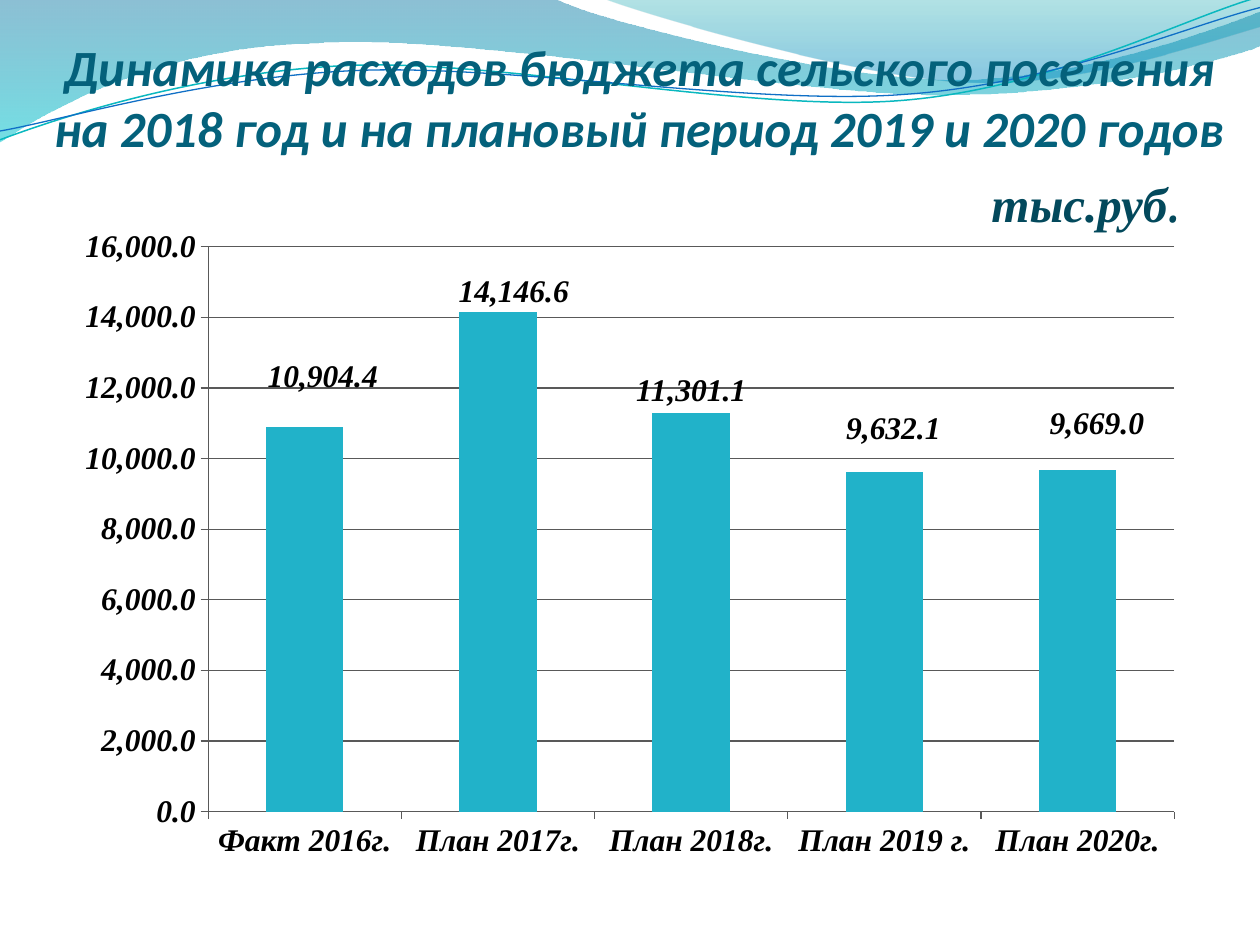
import lxml.etree
import pptx
import pptx.chart.data
import pptx.dml.color
import pptx.enum.chart
import pptx.enum.text
import pptx.oxml.ns
import pptx.util
from pptx.util import Inches

COLORS = {
    "title": "04617B", "unit": "03495C", "text": "000000", "bar": "21B2C9",
    "axis": "595959", "teal": "0AB8BF", "blue": "0F6FC6",
}
SERIF = "Times New Roman"
TITLE = ("Динамика расходов бюджета сельского поселения "
         "на 2018 год и на плановый период 2019 и 2020 годов")
UNIT_RUNS = [("тыс.руб", SERIF), (".", "TeX Gyre Pagella")]
NUMBER_FORMAT = "#,##0.0"
EXPENSES = [
    ("Факт 2016г.", 10904.4),
    ("План 2017г.", 14146.6),
    ("План 2018г.", 11301.1),
    ("План 2019 г.", 9632.1),
    ("План 2020г.", 9669.0),
]
# Point index: label shift as a share of the chart's width and height
LABEL_SHIFTS = {0: (0.016, -0.043), 1: (0.014, 0.003),
                3: (0.008, -0.032), 4: (0.017, -0.037)}
PLOT_AREA = {"x": 0.128, "y": 0.046, "w": 0.852, "h": 0.862}

# Each outline is a start point, then segments: one point is a line, three a Bezier curve.
# Gradient stops are position, colour and opacity in percent.
WAVES = [
    {"start": (0, 0), "segments": [
        [(4.4, -0.01)],
        [(4.76, 0.17), (6.64, 0.63), (7.58, 0.63)],
        [(8.53, 0.63), (9.58, 0.26), (10, 0.09)],
        [(10.01, 0.36)],
        [(9.83, 0.44), (8.7, 0.76), (7.46, 0.75)],
        [(6.22, 0.75), (3.82, 0.28), (2.57, 0.34)],
        [(1.29, 0.36), (0.46, 0.83), (-0.01, 1.13)]],
     "stops": [(0, "0074A1", 45), (1, "00C6CF", 55)]},
    {"start": (4.79, -0.01), "segments": [
        [(5.09, 0.11), (6.82, 0.62), (7.69, 0.65)],
        [(8.56, 0.69), (9.61, 0.32), (10, 0.21)],
        [(10, 0)]],
     "stops": [(0, "00A1A9", 30), (0.8, "008BBF", 45)]},
    {"start": (0, 1.11), "segments": [
        [(0.48, 0.93), (1.58, 0.57), (2.77, 0.52)],
        [(3.95, 0.47), (5.93, 0.89), (7.13, 0.8)],
        [(8.33, 0.71), (9.38, 0.15), (9.98, -0.02)]],
     "line": ("teal", 0.85)},
    {"start": (0, 1.04), "segments": [
        [(0.47, 0.96), (1.64, 0.61), (2.83, 0.56)],
        [(4.03, 0.51), (5.97, 0.84), (7.17, 0.75)],
        [(8.36, 0.67), (9.41, 0.21), (10, 0.06)]],
     "line": ("blue", 0.75)},
]


def rgb(value):
    return pptx.dml.color.RGBColor.from_string(value)


def style_font(font, size, color, name=SERIF):
    font.size = pptx.util.Pt(size)
    font.name = name
    font.bold = font.italic = True
    font.color.rgb = rgb(COLORS[color])


def bend_segments(shape, segments):
    """Turn each run of three straight pieces into one cubic curve."""
    pieces = iter(shape.element.xpath(".//a:path/a:lnTo"))
    for segment in segments:
        group = [next(pieces) for _ in segment]
        if len(group) == 3:
            curve = lxml.etree.Element(pptx.oxml.ns.qn("a:cubicBezTo"))
            group[0].addprevious(curve)
            for piece in group:
                curve.append(piece[0])
                piece.getparent().remove(piece)


def add_wave(slide, wave):
    start, segments = wave["start"], wave["segments"]
    builder = slide.shapes.build_freeform(*map(Inches, start), scale=1.0)
    builder.add_line_segments([(Inches(x), Inches(y)) for segment in segments
                               for x, y in segment], close="stops" in wave)
    shape = builder.convert_to_shape()
    bend_segments(shape, segments)
    shape.shadow.inherit = False
    if "line" in wave:
        color, width = wave["line"]
        shape.fill.background()
        shape.line.color.rgb = rgb(COLORS[color])
        shape.line.width = pptx.util.Pt(width)
        return
    shape.line.fill.background()
    shape.fill.gradient()
    shape.fill.gradient_angle = 270
    for stop, (position, color, _) in zip(shape.fill.gradient_stops, wave["stops"]):
        stop.position = position
        stop.color.rgb = rgb(color)
    color_elements = shape.element.xpath(".//a:gs/a:srgbClr")
    for element, (_, _, opacity) in zip(color_elements, wave["stops"]):
        alpha = lxml.etree.SubElement(element, pptx.oxml.ns.qn("a:alpha"))
        alpha.set("val", str(opacity * 1000))


def add_text(slide, box, runs, size, color, alignment):
    shape = slide.shapes.add_textbox(*map(Inches, box))
    text_frame = shape.text_frame
    text_frame.word_wrap = True
    paragraph = text_frame.paragraphs[0]
    paragraph.alignment = alignment
    for text, font_name in runs:
        run = paragraph.add_run()
        run.text = text
        style_font(run.font, size, color, font_name)
    return text_frame


def manual_layout(**settings):
    layout = lxml.etree.Element(pptx.oxml.ns.qn("c:layout"))
    manual = lxml.etree.SubElement(layout, pptx.oxml.ns.qn("c:manualLayout"))
    for name, value in settings.items():
        lxml.etree.SubElement(manual, pptx.oxml.ns.qn("c:" + name)).set("val", str(value))
    return layout


def add_expense_chart(slide):
    data = pptx.chart.data.CategoryChartData(number_format=NUMBER_FORMAT)
    data.categories = [name for name, _ in EXPENSES]
    data.add_series("Series 1", [value for _, value in EXPENSES])
    chart = slide.shapes.add_chart(
        pptx.enum.chart.XL_CHART_TYPE.COLUMN_CLUSTERED,
        *map(Inches, (0.5, 1.72, 9, 5.2)), data).chart
    chart.has_legend = chart.has_title = False
    style_font(chart.font, 18, "text")

    for axis in (chart.category_axis, chart.value_axis):
        axis.major_tick_mark = pptx.enum.chart.XL_TICK_MARK.OUTSIDE
        style_font(axis.tick_labels.font, 18, "text")
        axis.format.line.color.rgb = rgb(COLORS["axis"])
    value_axis = chart.value_axis
    value_axis.minimum_scale, value_axis.maximum_scale = 0, 16000
    value_axis.major_unit = 2000
    value_axis.has_major_gridlines = True
    value_axis.major_gridlines.format.line.color.rgb = rgb(COLORS["axis"])
    value_axis.tick_labels.number_format = NUMBER_FORMAT
    value_axis.tick_labels.number_format_is_linked = False

    plot = chart.plots[0]
    plot.gap_width = 150
    plot.vary_by_categories = False
    series = plot.series[0]
    series.format.fill.solid()
    series.format.fill.fore_color.rgb = rgb(COLORS["bar"])
    labels = series.data_labels
    labels.show_value = True
    labels.number_format = NUMBER_FORMAT
    labels.number_format_is_linked = False
    labels.position = pptx.enum.chart.XL_LABEL_POSITION.OUTSIDE_END
    style_font(labels.font, 18, "text")
    for index in LABEL_SHIFTS:
        label = series.points[index].data_label
        style_font(label.font, 18, "text")
        label.position = pptx.enum.chart.XL_LABEL_POSITION.OUTSIDE_END

    chart_space = chart._chartSpace
    for element in chart_space.xpath(".//c:showLeaderLines"):
        element.set("val", "0")
    for element, (x, y) in zip(chart_space.xpath(".//c:dLbl/c:idx"), LABEL_SHIFTS.values()):
        element.addnext(manual_layout(x=x, y=y))
    plot_area = chart_space.xpath(".//c:plotArea")[0]
    for element in plot_area.xpath("./c:layout"):
        plot_area.remove(element)
    plot_area.insert(0, manual_layout(layoutTarget="inner", xMode="edge", yMode="edge",
                                      **PLOT_AREA))


def main():
    presentation = pptx.Presentation()
    presentation.slide_width, presentation.slide_height = Inches(10), Inches(7.5)
    slide = presentation.slides.add_slide(presentation.slide_layouts[6])
    for wave in WAVES:
        add_wave(slide, wave)
    align = pptx.enum.text.PP_ALIGN
    title = add_text(slide, (0.39, 0, 9.38, 1.25), [(TITLE, "Calibri")], 29, "title",
                     align.CENTER)
    title.vertical_anchor = pptx.enum.text.MSO_ANCHOR.BOTTOM
    title.margin_left = title.margin_right = title.margin_bottom = 0
    add_expense_chart(slide)
    add_text(slide, (7.27, 1.33, 2.19, 0.57), UNIT_RUNS, 28, "unit", align.RIGHT)
    presentation.save("out.pptx")


if __name__ == "__main__":
    main()
